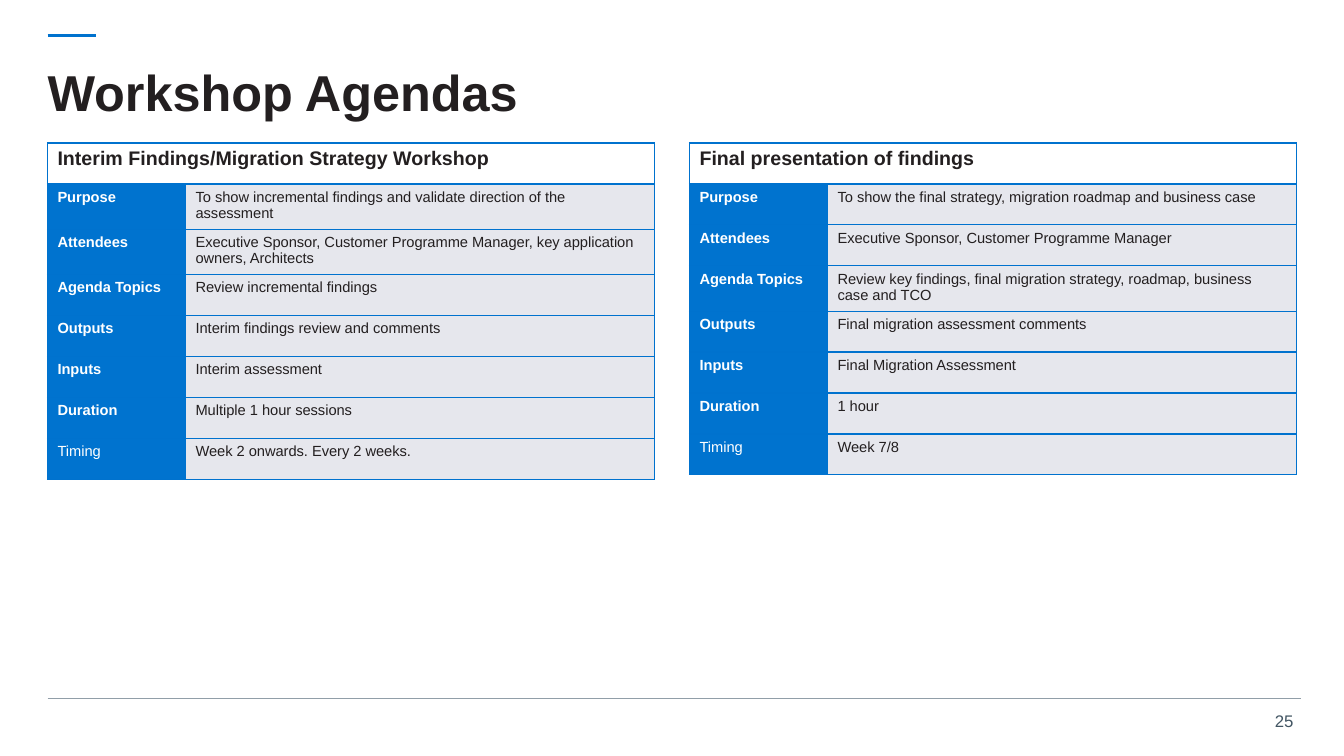
from lxml.etree import SubElement
from pptx import Presentation
from pptx.dml.color import RGBColor
from pptx.enum.shapes import MSO_CONNECTOR
from pptx.enum.text import MSO_ANCHOR, PP_ALIGN
from pptx.oxml.ns import qn
from pptx.util import Pt

COLORS = {"ink": "231F20", "slate": "425563", "blue": "0072CE", "label": "0073CF",
          "detail": "E6E7ED", "rule": "919EA8", "white": "FFFFFF"}
LABELS = ["Purpose", "Attendees", "Agenda Topics", "Outputs", "Inputs", "Duration", "Timing"]
AGENDAS = [
    (33.9, "Interim Findings/Migration Strategy Workshop", [
        "To show incremental findings and validate direction of the assessment",
        "Executive Sponsor, Customer Programme Manager, key application owners, Architects",
        "Review incremental findings",
        "Interim findings review and comments",
        "Interim assessment",
        "Multiple 1 hour sessions",
        "Week 2 onwards. Every 2 weeks."]),
    (492.5, "Final presentation of findings", [
        "To show the final strategy, migration roadmap and business case",
        "Executive Sponsor, Customer Programme Manager",
        "Review key findings, final migration strategy, roadmap, business case and TCO",
        "Final migration assessment comments",
        "Final Migration Assessment",
        "1 hour",
        "Week 7/8"]),
]
COL_WIDTHS = [98.6, 334.8]
ROW_HEIGHT = 29.25


def write(tf, text, size=10.5, color="ink", bold=False, align=PP_ALIGN.LEFT, spacing=1.0):
    tf.word_wrap = True
    p = tf.paragraphs[0]
    p.alignment, p.line_spacing = align, spacing
    r = p.add_run()
    r.text = text
    r.font.name, r.font.size, r.font.bold = "Arial", Pt(size), bold
    r.font.color.rgb = RGBColor.from_string(COLORS[color])


def style_cell(cell, fill):
    """Fill the cell and draw a 1 pt blue border on all four sides."""
    tc_pr = cell._tc.get_or_add_tcPr()
    for side in ("a:lnL", "a:lnR", "a:lnT", "a:lnB"):
        ln = SubElement(tc_pr, qn(side), w=str(Pt(1)))
        SubElement(SubElement(ln, qn("a:solidFill")), qn("a:srgbClr"), val=COLORS["blue"])
    cell.fill.solid()
    cell.fill.fore_color.rgb = RGBColor.from_string(COLORS[fill])


prs = Presentation()
prs.slide_width, prs.slide_height = Pt(960), Pt(540)
s = prs.slides.add_slide(prs.slide_layouts[6])

# Accent and footer lines
for x1, x2, y, color, width in [(34, 68.4, 25.2, "blue", 2), (34, 929.5, 498.8, "rule", 0.75)]:
    line = s.shapes.add_connector(MSO_CONNECTOR.STRAIGHT, Pt(x1), Pt(y), Pt(x2), Pt(y))
    line.line.color.rgb = RGBColor.from_string(COLORS[color])
    line.line.width = Pt(width)
    SubElement(line._element.spPr, qn("a:effectLst"))

# Page number and title
number = s.shapes.add_textbox(Pt(901.5), Pt(504), Pt(29.5), Pt(21.6))
write(number.text_frame, "25", size=12, color="slate", align=PP_ALIGN.RIGHT)

title = s.shapes.add_textbox(Pt(34), Pt(33.8), Pt(898), Pt(68.4))
tf = title.text_frame
tf.margin_left = tf.margin_right = tf.margin_top = tf.margin_bottom = 0
tf.vertical_anchor = MSO_ANCHOR.MIDDLE
write(tf, "Workshop Agendas", size=36, bold=True, spacing=0.9)

# Agenda tables
for left, heading, details in AGENDAS:
    rows = len(LABELS) + 1
    table = s.shapes.add_table(rows, 2, Pt(left), Pt(102.2), Pt(sum(COL_WIDTHS)),
                               Pt(rows * ROW_HEIGHT)).table
    for column, width in zip(table.columns, COL_WIDTHS):
        column.width = Pt(width)
    for row in table.rows:
        row.height = Pt(ROW_HEIGHT)

    table.cell(0, 0).merge(table.cell(0, 1))
    for col in range(2):
        style_cell(table.cell(0, col), "white")
    write(table.cell(0, 0).text_frame, heading, size=14, bold=True)

    for i, (label, detail) in enumerate(zip(LABELS, details), start=1):
        style_cell(table.cell(i, 0), "label")
        write(table.cell(i, 0).text_frame, label, color="white", bold=label != "Timing")
        style_cell(table.cell(i, 1), "detail")
        write(table.cell(i, 1).text_frame, detail)

prs.save("out.pptx")
